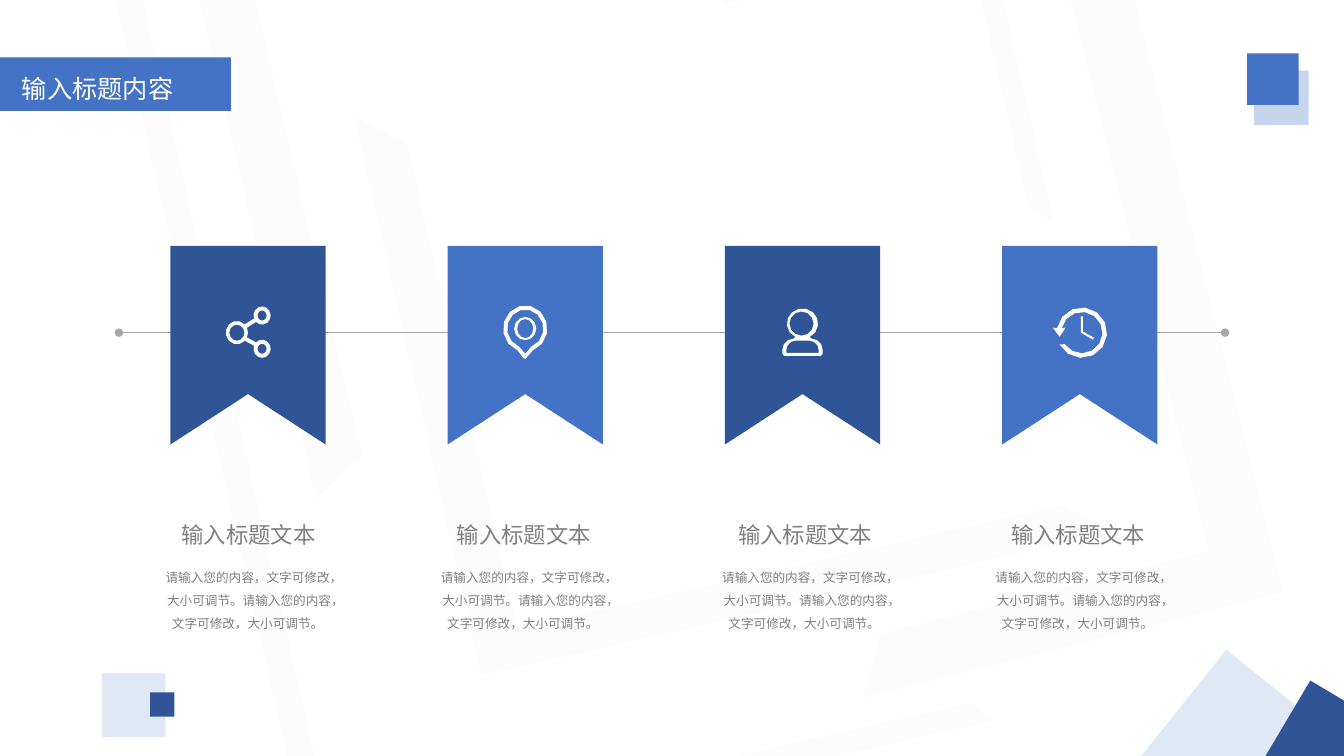
from math import ceil, cos, radians, sin

from pptx import Presentation
from pptx.dml.color import RGBColor
from pptx.enum.shapes import MSO_CONNECTOR, MSO_SHAPE
from pptx.enum.text import MSO_AUTO_SIZE, PP_ALIGN
from pptx.oxml.ns import qn
from pptx.util import Inches, Pt
from lxml.etree import SubElement

COLORS = {
    "blue": "4472C4", "navy": "2F5597", "pale": "C7D4ED",
    "gray": "A6A6A6", "text": "808080", "white": "FFFFFF",
}
FONT = "Noto Sans CJK SC"


def arc(cx, cy, rx, ry, start=0, end=360):
    """Points of an elliptical arc; angles grow clockwise from the right."""
    steps = ceil(abs(end - start) / 30)
    angles = [radians(start + (end - start) * i / steps) for i in range(steps + 1)]
    return [(cx + rx * cos(a), cy + ry * sin(a)) for a in angles]


def ellipse(cx, cy, rx, ry):
    return arc(cx, cy, rx, ry)[:-1]


class SlideBuilder:
    def __init__(self, slide):
        self.slide = slide

    def paint(self, shape, color, opacity=100):
        shape.shadow.inherit = False
        shape.fill.solid()
        shape.fill.fore_color.rgb = RGBColor.from_string(COLORS[color])
        shape.line.fill.background()
        if opacity < 100:
            fill = shape._element.spPr.find(qn("a:solidFill"))
            SubElement(fill[0], qn("a:alpha"), val=str(opacity * 1000))

    def preset(self, kind, box, color, opacity=100, rotation=0, adjust=(), flip=False):
        shape = self.slide.shapes.add_shape(kind, *map(Inches, box))
        for i, value in enumerate(adjust):
            shape.adjustments[i] = value
        shape.rotation = rotation
        if flip:
            shape._element.spPr.find(qn("a:xfrm")).set("flipH", "1")
        self.paint(shape, color, opacity)

    def outline(self, contours, color):
        """One freeform; contours after the first cut holes or add islands."""
        first, *others = [[(Inches(x), Inches(y)) for x, y in c] for c in contours]
        builder = self.slide.shapes.build_freeform(*first[0])
        builder.add_line_segments(first[1:], close=True)
        for contour in others:
            builder.move_to(*contour[0])
            builder.add_line_segments(contour[1:], close=True)
        self.paint(builder.convert_to_shape(), color)

    def axis(self, start, end, color):
        line = self.slide.shapes.add_connector(
            MSO_CONNECTOR.STRAIGHT, *map(Inches, start + end))
        line.line.color.rgb = RGBColor.from_string(COLORS[color])
        line.line.width = Pt(1)
        stroke = line._element.spPr.find(qn("a:ln"))
        for tip in ("a:headEnd", "a:tailEnd"):
            SubElement(stroke, qn(tip), type="oval")
        SubElement(line._element.spPr, qn("a:effectLst"))

    def text(self, box, words, size, color, align=PP_ALIGN.CENTER, spacing=None, tight=True):
        frame = self.slide.shapes.add_textbox(*map(Inches, box)).text_frame
        frame.word_wrap = True
        if tight:
            frame.margin_left = frame.margin_right = 0
            frame.margin_top = frame.margin_bottom = 0
            frame.auto_size = MSO_AUTO_SIZE.SHAPE_TO_FIT_TEXT
        paragraph = frame.paragraphs[0]
        paragraph.alignment = align
        if spacing:
            paragraph.line_spacing = spacing
            paragraph.space_before = Pt(0.2)
        run = paragraph.add_run()
        run.text = words
        run.font.size = Pt(size)
        run.font.name = FONT
        run.font.color.rgb = RGBColor.from_string(COLORS[color])
        SubElement(run._r.get_or_add_rPr(), qn("a:ea"), typeface=FONT)


def share_icon():
    return [
        arc(2.35, 3.3, 0.11, 0.115, 45, 315) + arc(2.6, 3.13, 0.085, 0.09, 160, 495)
        + arc(2.35, 3.3, 0.11, 0.115, -25, 25) + arc(2.6, 3.46, 0.085, 0.09, 225, 560),
        ellipse(2.35, 3.3, 0.075, 0.08),
        ellipse(2.6, 3.13, 0.045, 0.05),
        ellipse(2.6, 3.46, 0.045, 0.05),
    ]


def pin_icon():
    return [
        arc(5.21, 3.26, 0.22, 0.23, 110, 430) + [(5.22, 3.55), (5.21, 3.56), (5.19, 3.55)],
        arc(5.21, 3.26, 0.18, 0.19, 110, 430) + [(5.21, 3.51)],
        ellipse(5.21, 3.26, 0.11, 0.115),
        ellipse(5.21, 3.26, 0.08, 0.095),
    ]


def person_icon():
    return [
        arc(7.96, 3.21, 0.155, 0.15, 117, 423) + arc(8.05, 3.47, 0.11, 0.11, 270, 360)
        + [(8.16, 3.51), (8.14, 3.53), (7.78, 3.53), (7.76, 3.51)]
        + arc(7.87, 3.47, 0.11, 0.11, 180, 270),
        ellipse(7.95, 3.21, 0.12, 0.12),
        arc(7.89, 3.47, 0.09, 0.09, 180, 270) + arc(8.03, 3.47, 0.09, 0.09, 270, 360)
        + [(8.12, 3.5), (7.8, 3.5)],
    ]


def history_icon():
    return [
        arc(10.73, 3.3, 0.25, 0.25, 190, 512) + arc(10.73, 3.3, 0.205, 0.205, 506, 193)
        + [(10.57, 3.25), (10.51, 3.34), (10.44, 3.25)],
        [(10.72, 3.14), (10.72, 3.3), (10.84, 3.37), (10.85, 3.35), (10.74, 3.29), (10.74, 3.14)],
    ]


def main():
    deck = Presentation()
    deck.slide_width, deck.slide_height = Inches(13.33), Inches(7.5)
    page = SlideBuilder(deck.slides.add_slide(deck.slide_layouts[6]))

    # Faint background frames
    for box, rotation, adjust, flip in [
        ((4.42, 0, 5.7, 6.42), 257.2, (0.08, 0.065), False),
        ((0.81, -0.06, 9.28, 6.9), 257.2, (0.039, 0.032), False),
        ((7.24, -0.34, 3.01, 2.83), 77, (0.077, 0.052), False),
        ((2.37, -1.66, 9.45, 5.61), 346.8, (0.091, 0.097), False),
        ((5.83, 0.5, 7.74, 4.3), 75.9, (0.144, 0.134), True),
    ]:
        page.preset(MSO_SHAPE.HALF_FRAME, box, "gray", 3, rotation, adjust, flip)

    # Title banner
    page.preset(MSO_SHAPE.PENTAGON, (0, 0.57, 2.29, 0.53), "blue", adjust=(0,))
    page.text((0.12, 0.68, 2.17, 0.43), "输入标题内容", 18, "white",
              PP_ALIGN.JUSTIFY, tight=False)

    # Corner squares
    for left, top, side, color, opacity, rotation in [
        (12.44, 0.7, 0.54, "pale", 100, 0),
        (11.53, 6.75, 1.5, "pale", 53, 308.7),
        (1.01, 6.68, 0.63, "pale", 53, 0),
        (1.49, 6.87, 0.24, "navy", 100, 0),
        (12.37, 0.53, 0.51, "blue", 100, 0),
        (12.7, 6.92, 0.91, "navy", 100, 300.7),
    ]:
        page.preset(MSO_SHAPE.RECTANGLE, (left, top, side, side), color, opacity, rotation)

    # Timeline with captions
    page.axis((1.18, 3.3), (12.15, 3.3), "gray")
    for left in (1.62, 4.35, 7.14, 9.85):
        page.text((left, 5.17, 1.69, 0.27), "输入标题文本", 16, "text")
        page.text((left - 0.01, 5.58, 1.69, 0.91),
                  "请输入您的内容，文字可修改， 大小可调节。请输入您的内容，文字可修改，大小可调节。",
                  9, "text", spacing=1.5)

    # Ribbons and their icons
    icons = [share_icon(), pin_icon(), person_icon(), history_icon()]
    for i, icon in enumerate(icons):
        left = 1.69 + 2.75 * i
        right = left + 1.54
        ribbon = [(left, 2.44), (right, 2.44), (right, 4.41),
                  (left + 0.77, 3.91), (left, 4.41)]
        page.outline([ribbon], ("navy", "blue")[i % 2])
        page.outline(icon, "white")

    deck.save("out.pptx")


if __name__ == "__main__":
    main()
